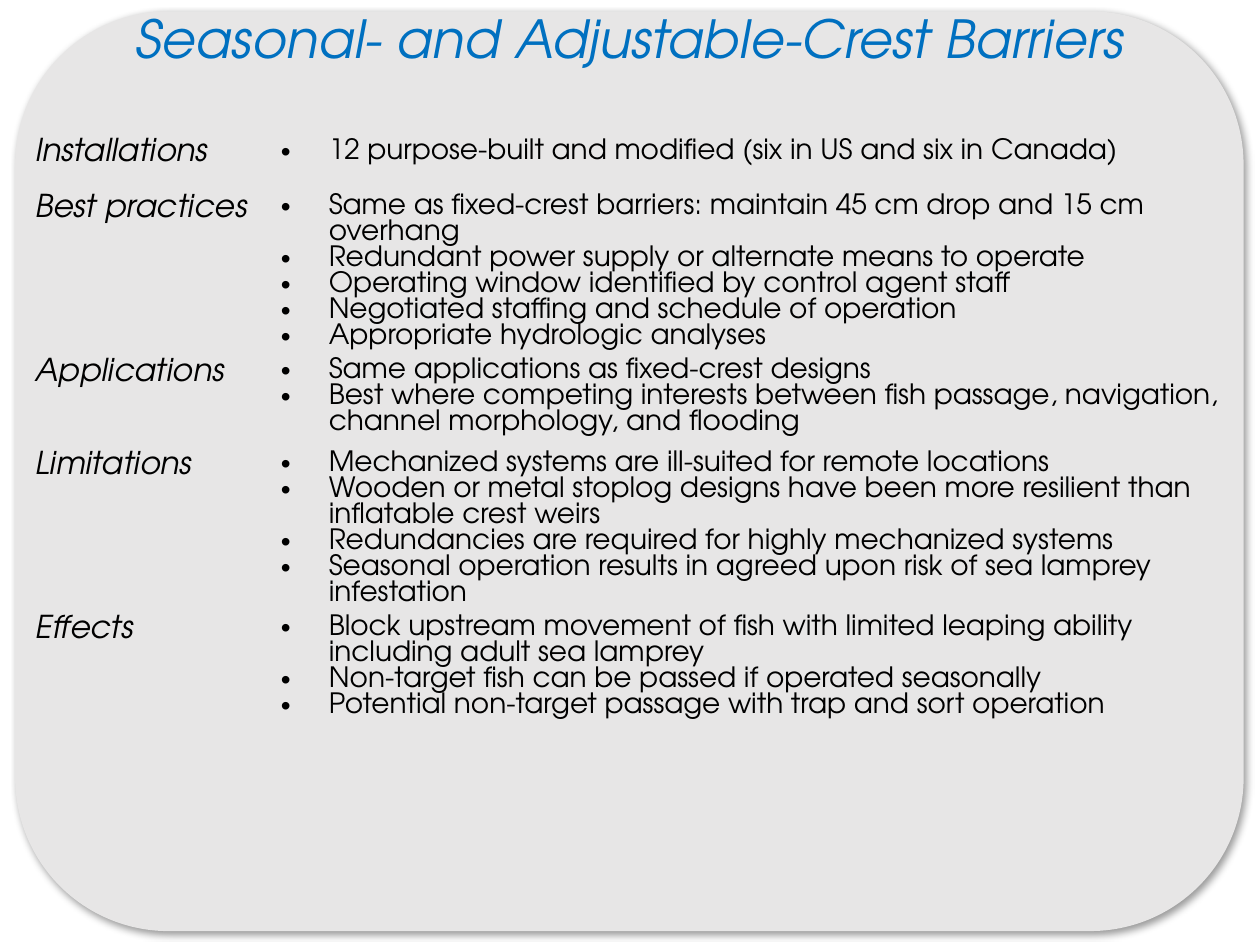
from lxml.etree import SubElement
from pptx import Presentation
from pptx.dml.color import RGBColor
from pptx.enum.shapes import MSO_SHAPE
from pptx.enum.text import MSO_ANCHOR, MSO_AUTO_SIZE, PP_ALIGN
from pptx.oxml.ns import qn
from pptx.util import Inches, Pt

WIDTH, HEIGHT = 10, 7.5
FONT = "TeX Gyre Adventor"
COLOURS = {"panel": "E7E6E6", "title": "0070C0", "text": "000000"}
PLAIN_TABLE = "{2D5ABB26-0587-4C30-8999-92F81FD0307C}"
COLUMNS = [1.95, 7.6]
ROWS = [0.44, 1.28, 0.74, 1.23, 1.26]
INDENT = 0.38

TOPICS = {
    "Installations": [
        "12 purpose-built and modified (six in US and six in Canada)",
    ],
    "Best practices": [
        "Same as fixed-crest barriers: maintain 45 cm drop and 15 cm overhang",
        "Redundant power supply or alternate means to operate",
        "Operating window identified by control agent staff",
        "Negotiated staffing and schedule of operation",
        "Appropriate hydrologic analyses",
    ],
    "Applications": [
        "Same applications as fixed-crest designs",
        "Best where competing interests between fish passage, navigation, "
        "channel morphology, and flooding",
    ],
    "Limitations": [
        "Mechanized systems are ill-suited for remote locations",
        "Wooden or metal stoplog designs have been more resilient than "
        "inflatable crest weirs",
        "Redundancies are required for highly mechanized systems",
        "Seasonal operation results in agreed upon risk of sea lamprey infestation",
    ],
    "Effects": [
        "Block upstream movement of fish with limited leaping ability "
        "including adult sea lamprey",
        "Non-target fish can be passed if operated seasonally",
        "Potential non-target passage with trap and sort operation",
    ],
}


def colour(name):
    return RGBColor.from_string(COLOURS[name])


def add_bullet(para):
    properties = para._p.get_or_add_pPr()
    properties.set("marL", str(Inches(INDENT)))
    properties.set("indent", str(-Inches(INDENT)))
    SubElement(properties, qn("a:buFont"), typeface="Arial")
    SubElement(properties, qn("a:buChar"), char="•")


def write(frame, lines, size, italic=False, bullet=False, ink="text",
          align=PP_ALIGN.LEFT):
    frame.word_wrap = True
    for index, line in enumerate(lines):
        para = frame.add_paragraph() if index else frame.paragraphs[0]
        if bullet:
            add_bullet(para)
        para.alignment = align
        span = para.add_run()
        span.text = line
        span.font.name = FONT
        span.font.size = Pt(size)
        span.font.italic = italic
        span.font.color.rgb = colour(ink)


def add_shadow(shape):
    effects = SubElement(shape._element.spPr, qn("a:effectLst"))
    shadow = SubElement(effects, qn("a:outerShdw"), blurRad=str(Pt(4)),
                        dist=str(Pt(3)), dir=str(45 * 60000),
                        algn="tl", rotWithShape="0")
    black = SubElement(shadow, qn("a:srgbClr"), val=COLOURS["text"])
    SubElement(black, qn("a:alpha"), val="40000")


def add_panel(page):
    panel = page.shapes.add_shape(
        MSO_SHAPE.ROUNDED_RECTANGLE,
        Inches(0.12), Inches(0.09), Inches(9.75), Inches(7.3))
    panel.fill.solid()
    panel.fill.fore_color.rgb = colour("panel")
    panel.line.fill.background()
    add_shadow(panel)


def fill_cell(cell, lines, **style):
    cell.fill.background()
    cell.margin_left = cell.margin_right = Inches(0.06)
    cell.margin_top = cell.margin_bottom = Inches(0.03)
    cell.vertical_anchor = MSO_ANCHOR.TOP
    write(cell.text_frame, lines, **style)


def add_topics(page):
    frame = page.shapes.add_table(
        len(ROWS), len(COLUMNS), Inches(0.22), Inches(1.07),
        Inches(sum(COLUMNS)), Inches(sum(ROWS)))
    table = frame.table
    table.first_row = table.horz_banding = False
    table._tbl.tblPr.find(qn("a:tableStyleId")).text = PLAIN_TABLE
    for column, width in zip(table.columns, COLUMNS):
        column.width = Inches(width)
    for row, height, (topic, points) in zip(table.rows, ROWS, TOPICS.items()):
        row.height = Inches(height)
        fill_cell(row.cells[0], [topic], size=18, italic=True)
        fill_cell(row.cells[1], points, size=16, bullet=True)


def place_title(page):
    title = page.shapes.title
    title.left, title.top = 0, 0
    title.width, title.height = Inches(WIDTH), Inches(0.61)
    frame = title.text_frame
    frame.auto_size = MSO_AUTO_SIZE.SHAPE_TO_FIT_TEXT
    frame.vertical_anchor = MSO_ANCHOR.TOP
    write(frame, ["Seasonal- and Adjustable-Crest Barriers"], size=30,
          italic=True, ink="title", align=PP_ALIGN.CENTER)
    page.shapes._spTree.append(title._element)


def main():
    deck = Presentation()
    deck.slide_width, deck.slide_height = Inches(WIDTH), Inches(HEIGHT)
    page = deck.slides.add_slide(deck.slide_layouts[5])
    add_panel(page)
    add_topics(page)
    place_title(page)
    deck.save("out.pptx")


if __name__ == "__main__":
    main()
